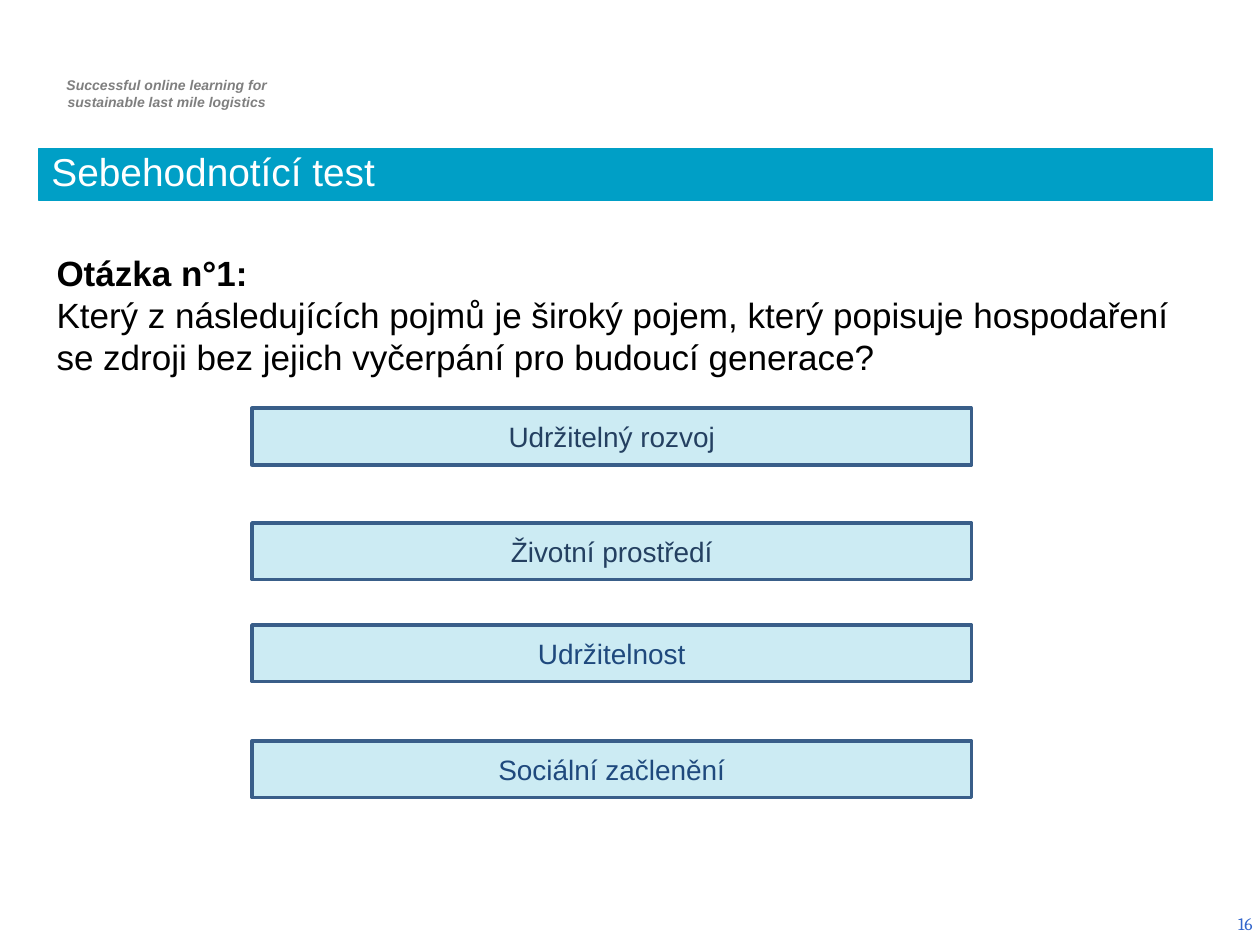
from lxml import etree
from pptx import Presentation
from pptx.dml.color import RGBColor
from pptx.enum.shapes import MSO_SHAPE
from pptx.enum.text import MSO_ANCHOR, PP_ALIGN
from pptx.oxml.ns import qn
from pptx.util import Inches, Pt

RECTANGLE = MSO_SHAPE.RECTANGLE
TOP, MIDDLE, BOTTOM = MSO_ANCHOR.TOP, MSO_ANCHOR.MIDDLE, MSO_ANCHOR.BOTTOM
LEFT, CENTER, RIGHT = PP_ALIGN.LEFT, PP_ALIGN.CENTER, PP_ALIGN.RIGHT

WHITE = RGBColor(0xFF, 0xFF, 0xFF)
BLACK = RGBColor(0x00, 0x00, 0x00)
GRAY = RGBColor(0x7F, 0x7F, 0x7F)
TEAL = RGBColor(0x00, 0x9F, 0xC6)
BORDER = RGBColor(0x39, 0x5E, 0x89)
DARK_BLUE = RGBColor(0x24, 0x40, 0x61)
NAVY = RGBColor(0x1F, 0x49, 0x7D)
NUMBER_BLUE = RGBColor(0x33, 0x66, 0xCC)

ANSWERS = [
    ("Udržitelný rozvoj", 3.24, DARK_BLUE),
    ("Životní prostředí", 4.15, DARK_BLUE),
    ("Udržitelnost", 4.96, NAVY),
    ("Sociální začlenění", 5.88, NAVY),
]


class QuizSlide:
    font_name = "Arial"

    def __init__(self, page):
        self.page = page

    def set_text(self, shape, text, size, color, align=LEFT, anchor=TOP, font_name=font_name):
        frame = shape.text_frame
        frame.word_wrap = True
        frame.vertical_anchor = anchor
        frame.text = text
        for para in frame.paragraphs:
            para.alignment = align
            for span in para.runs:
                span.font.name = font_name
                span.font.size = Pt(size)
                span.font.color.rgb = color
        return frame.paragraphs

    def text(self, bounds, text, size, color, **layout):
        box = self.page.shapes.add_textbox(*map(Inches, bounds))
        return self.set_text(box, text, size, color, **layout)

    def rectangle(self, bounds, line_color, line_width, opacity=100):
        shape = self.page.shapes.add_shape(RECTANGLE, *map(Inches, bounds))
        shape.shadow.inherit = False
        shape.fill.solid()
        shape.fill.fore_color.rgb = TEAL
        if opacity < 100:
            color = shape.element.spPr.find(qn("a:solidFill"))[0]
            etree.SubElement(color, qn("a:alpha"), val=str(opacity * 1000))
        shape.line.color.rgb = line_color
        shape.line.width = Pt(line_width)
        return shape

    def header(self, text):
        for para in self.text((0.29, 0.56, 2.03, 0.37), text, 8, GRAY, align=CENTER):
            para._p.get_or_add_pPr().set("marL", str(Inches(0.04)))
            for span in para.runs:
                span.font.bold = True
                span.font.italic = True

    def title(self, text):
        bar = self.rectangle((0.31, 1.18, 9.31, 0.41), TEAL, 0.75)
        para = self.set_text(bar, text, 22.2, WHITE, anchor=BOTTOM)[0]
        para.line_spacing = 0.8

    def question(self, label, text):
        paragraphs = self.text((0.35, 1.95, 9.31, 1.11), f"{label}\n{text}", 20, BLACK)
        paragraphs[0].runs[0].font.bold = True

    def answer(self, text, top, color):
        button = self.rectangle((2, top, 5.71, 0.45), BORDER, 2, opacity=20)
        self.set_text(button, text, 16, color, align=CENTER, anchor=MIDDLE)

    def page_number(self, text):
        self.text((7.71, 7.13, 2.33, 0.4), text, 10, NUMBER_BLUE,
                  align=RIGHT, anchor=MIDDLE, font_name="Cambria")


def main():
    deck = Presentation()
    deck.slide_width = Inches(10)
    deck.slide_height = Inches(7.5)
    quiz = QuizSlide(deck.slides.add_slide(deck.slide_layouts[6]))
    quiz.header("Successful online learning for\nsustainable last mile logistics")
    quiz.page_number("16")
    quiz.title("Sebehodnotící test")
    quiz.question(
        "Otázka n°1:",
        "Který z následujících pojmů je široký pojem, který popisuje hospodaření "
        "se zdroji bez jejich vyčerpání pro budoucí generace?",
    )
    for text, top, color in ANSWERS:
        quiz.answer(text, top, color)
    deck.save("out.pptx")


if __name__ == "__main__":
    main()
